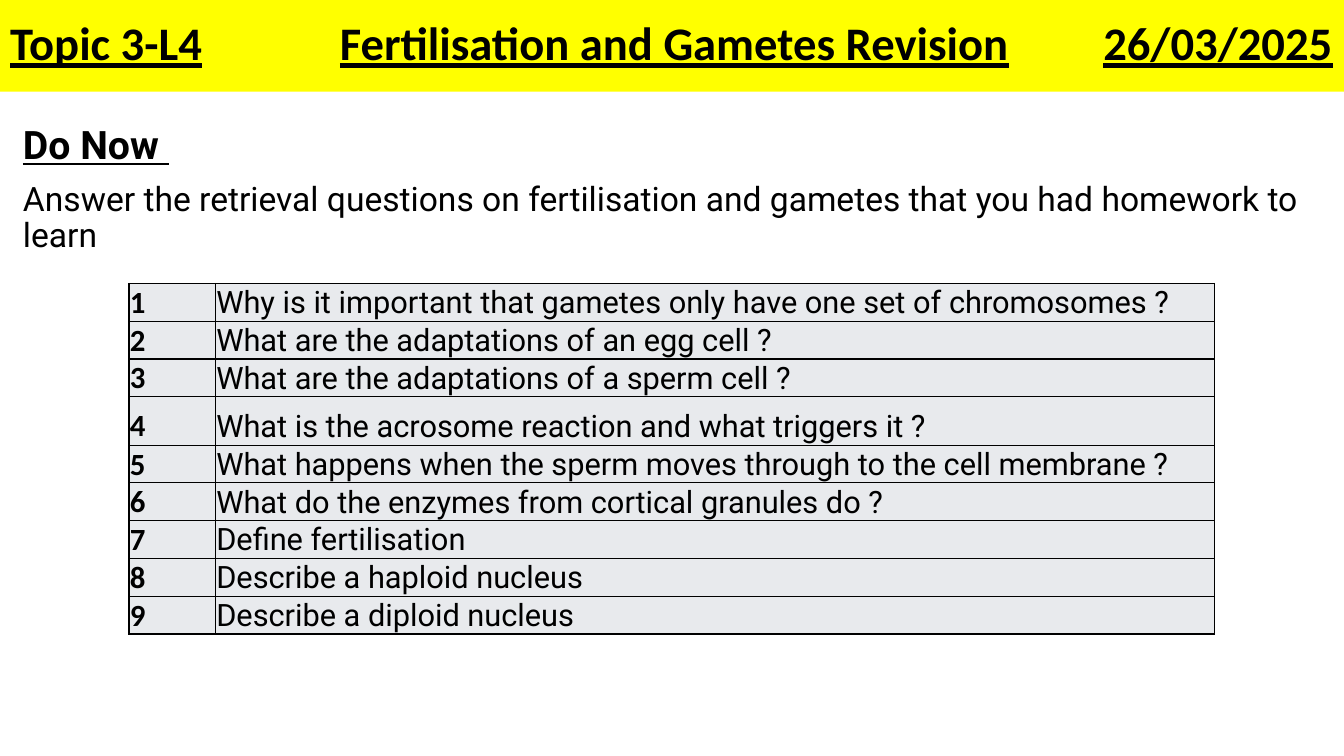
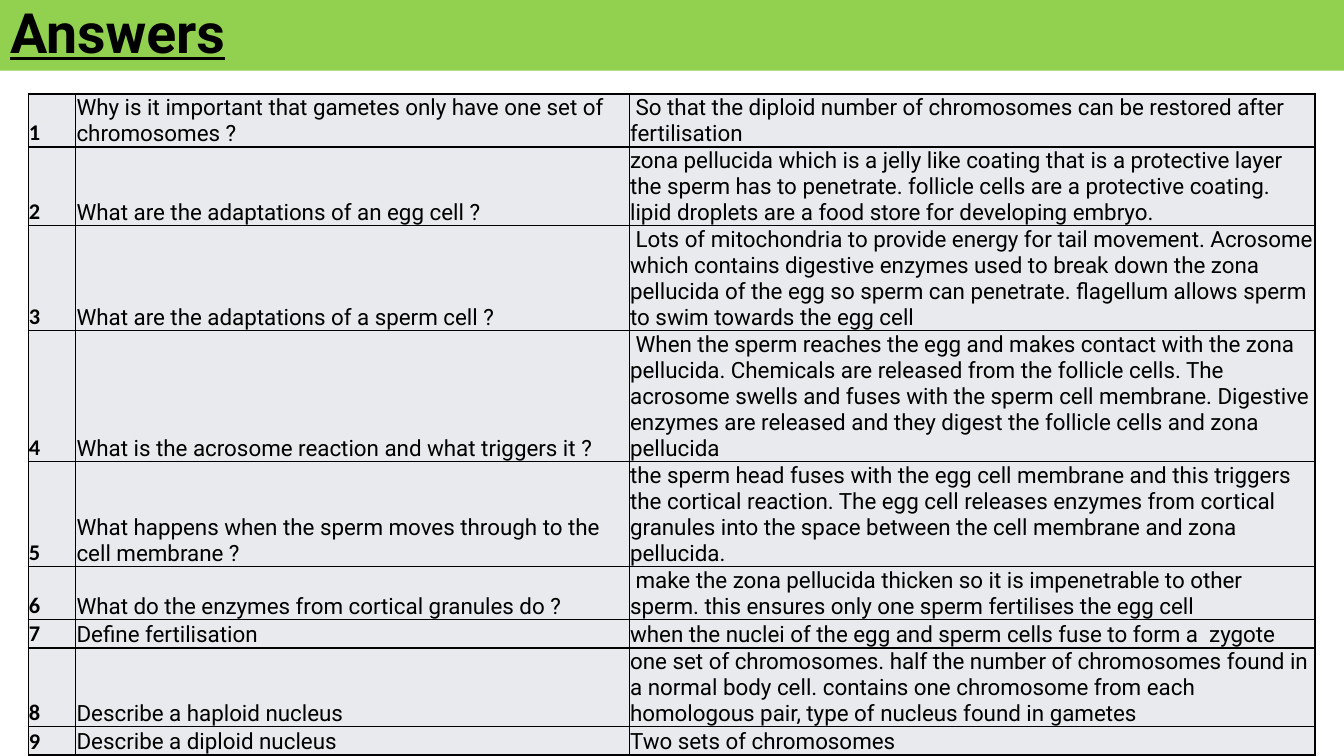
from lxml import etree
from pptx import Presentation
from pptx import util as u
from pptx.dml.color import RGBColor
from pptx.enum import text
from pptx.oxml import ns

COLOURS = {"ink": "000000", "lesson": "FFFF00", "answers": "92D050", "cell": "E8EAED"}
FONTS = {"number": "Calibri", "main": "Roboto"}
MARGINS = {"margin_left": u.Cm(0.02), "margin_right": u.Cm(0.02),
           "margin_top": u.Cm(0.02), "margin_bottom": 0}
ROW_HEIGHT, TALL_ROW_HEIGHT, TALL_ROW = 0.5, 1.22, 3

QUESTIONS = [
    ("Why is it important that gametes only have one set of chromosomes ?",
     " So that the diploid number of chromosomes can be restored after fertilisation"),
    ("What are the adaptations of an egg cell ?",
     "zona pellucida which is a jelly like coating that is a protective layer the sperm has to "
     "penetrate. follicle cells are a protective coating. lipid droplets are a food store for "
     "developing embryo."),
    ("What are the adaptations of a sperm cell ?",
     " Lots of mitochondria to provide energy for tail movement. Acrosome which contains "
     "digestive enzymes used to break down the zona pellucida of the egg so sperm can penetrate. "
     "flagellum allows sperm to swim towards the egg cell"),
    ("What is the acrosome reaction and what triggers it ?",
     " When the sperm reaches the egg and makes contact with the zona pellucida. Chemicals are "
     "released from the follicle cells. The acrosome swells and fuses with the sperm cell "
     "membrane. Digestive enzymes are released and they digest the follicle cells and zona "
     "pellucida"),
    ("What happens when the sperm moves through to the cell membrane ?",
     "the sperm head fuses with the egg cell membrane and this triggers the cortical reaction. "
     "The egg cell releases enzymes from cortical granules into the space between the cell "
     "membrane and zona pellucida."),
    ("What do the enzymes from cortical granules do ?",
     " make the zona pellucida thicken so it is impenetrable to other sperm. this ensures only "
     "one sperm fertilises the egg cell"),
    ("Define fertilisation",
     "when the nuclei of the egg and sperm cells fuse to form a  zygote"),
    ("Describe a haploid nucleus",
     "one set of chromosomes. half the number of chromosomes found in a normal body cell. "
     "contains one chromosome from each homologous pair, type of nucleus found in gametes"),
    ("Describe a diploid nucleus", "Two sets of chromosomes"),
]


def set_all(target, values):
    for name, value in values.items():
        setattr(target, name, value)


class Lesson:
    def __init__(self):
        self.presentation = Presentation()
        set_all(self.presentation, {"slide_width": u.Cm(33.87), "slide_height": u.Cm(19.05)})
        self.slide = None

    def add_slide(self):
        self.slide = self.presentation.slides.add_slide(self.presentation.slide_layouts[5])

    def add_words(self, paragraph, words, size, font="main", bold=False, underline=False):
        run = paragraph.add_run()
        run.text = words
        set_all(run.font, {"name": FONTS[font], "size": u.Pt(size),
                           "bold": bold, "underline": underline})
        run.font.color.rgb = RGBColor.from_string(COLOURS["ink"])

    def title(self, parts, colour, height, size, font="main", tabs=()):
        """Fill the title band; each part after the first starts at its tab stop."""
        shape = self.slide.shapes.title
        set_all(shape, {"left": 0, "top": 0, "height": u.Cm(height),
                        "width": self.presentation.slide_width})
        shape.fill.solid()
        shape.fill.fore_color.rgb = RGBColor.from_string(COLOURS[colour])
        set_all(shape.text_frame, {"vertical_anchor": text.MSO_ANCHOR.MIDDLE, "margin_right": 0,
                                   "word_wrap": True, "auto_size": text.MSO_AUTO_SIZE.NONE})
        paragraph = shape.text_frame.paragraphs[0]
        set_all(paragraph, {"alignment": text.PP_ALIGN.LEFT, "line_spacing": 0.9})
        if tabs:
            stops = etree.SubElement(paragraph._p.get_or_add_pPr(), ns.qn("a:tabLst"))
            for position in tabs:
                etree.SubElement(stops, ns.qn("a:tab"), pos=str(u.Cm(position)), algn="l")
        for index, part in enumerate(parts):
            if index:
                self.add_words(paragraph, "\t", size, font, bold=True)
            self.add_words(paragraph, part, size, font, bold=True, underline=True)

    def instructions(self, heading, task):
        box = self.slide.shapes.add_textbox(u.Cm(0.33), u.Cm(3.05), u.Cm(33.5), u.Cm(3.5))
        frame = box.text_frame
        frame.word_wrap = True
        self.add_words(frame.paragraphs[0], heading, 28, bold=True, underline=True)
        self.add_words(frame.add_paragraph(), task, 24)
        for paragraph in frame.paragraphs:
            set_all(paragraph, {"line_spacing": 0.9, "space_before": u.Pt(10)})

    def cell(self, cell, words, size, is_number):
        set_all(cell, {**MARGINS, "vertical_anchor": text.MSO_ANCHOR.BOTTOM})
        properties = cell._tc.get_or_add_tcPr()
        for side in "LRTB":
            line = etree.SubElement(properties, ns.qn(f"a:ln{side}"), w=str(u.Pt(1)))
            fill = etree.SubElement(line, ns.qn("a:solidFill"))
            etree.SubElement(fill, ns.qn("a:srgbClr"), val=COLOURS["ink"])
        cell.fill.solid()
        cell.fill.fore_color.rgb = RGBColor.from_string(COLOURS["cell"])
        self.add_words(cell.text_frame.paragraphs[0], words, size,
                       "number" if is_number else "main", bold=is_number)

    def numbered_table(self, rows, left, top, widths, size):
        """Draw rows of texts, with a leading column that counts them."""
        table = self.slide.shapes.add_table(
            len(rows), len(widths), u.Cm(left), u.Cm(top),
            u.Cm(sum(widths)), u.Cm(ROW_HEIGHT * len(rows))).table
        set_all(table, {"first_row": False, "horz_banding": False})
        for column, width in zip(table.columns, widths):
            column.width = u.Cm(width)
        for index, texts in enumerate(rows):
            height = TALL_ROW_HEIGHT if index == TALL_ROW else ROW_HEIGHT
            table.rows[index].height = u.Cm(height)
            for column, words in enumerate((str(index + 1), *texts)):
                self.cell(table.cell(index, column), words, size, is_number=column == 0)


def main():
    lesson = Lesson()

    lesson.add_slide()
    lesson.title(["Topic 3-L4", "Fertilisation and Gametes Revision", "26/03/2025"],
                 "lesson", 2.31, 33.3, "number", tabs=(8.31, 27.55))
    lesson.instructions("Do Now ", "Answer the retrieval questions on fertilisation and gametes "
                        "that you had homework to learn")
    lesson.numbered_table([(question,) for question, _ in QUESTIONS],
                          3.25, 7.14, (2.18, 25.17), 22)

    lesson.add_slide()
    lesson.title(["Answers"], "answers", 1.78, 39.6)
    lesson.numbered_table(QUESTIONS, 0.71, 2.37, (1.2, 13.95, 17.28), 16)

    lesson.presentation.save("out.pptx")


if __name__ == "__main__":
    main()
